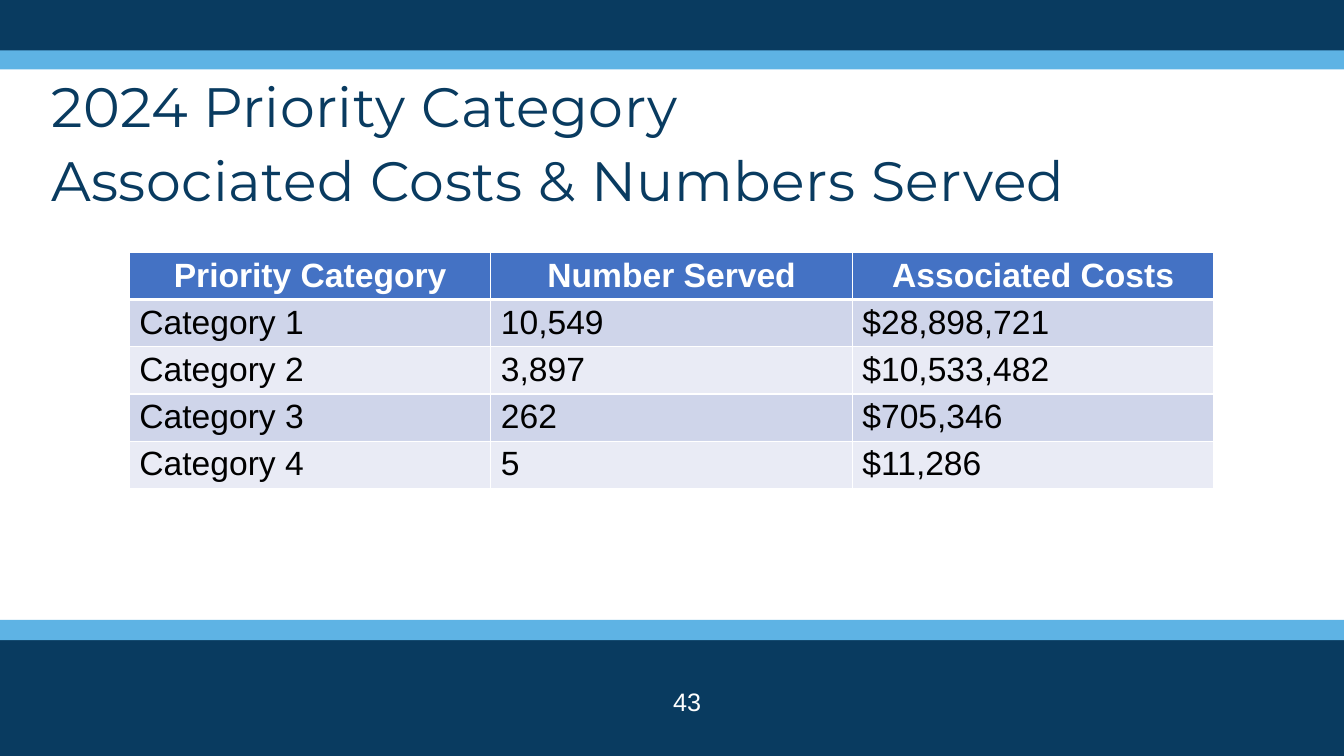
from lxml import etree
from pptx import Presentation
from pptx.dml.color import RGBColor
from pptx.enum.shapes import MSO_SHAPE
from pptx.enum.text import MSO_ANCHOR, MSO_AUTO_SIZE, PP_ALIGN
from pptx.oxml.ns import qn
from pptx.util import Cm, Pt

NAVY = RGBColor(0x09, 0x3B, 0x60)
SKY = RGBColor(0x5E, 0xB3, 0xE4)
WHITE = RGBColor(0xFF, 0xFF, 0xFF)
BLACK = RGBColor(0, 0, 0)
HEADER_BLUE = RGBColor(0x44, 0x72, 0xC4)
ROW_TINTS = (RGBColor(0xCF, 0xD5, 0xEA), RGBColor(0xE9, 0xEB, 0xF5))
RECTANGLE = MSO_SHAPE.RECTANGLE
MIDDLE = MSO_ANCHOR.MIDDLE
NO_AUTOFIT = MSO_AUTO_SIZE.NONE
LEFT, CENTER = PP_ALIGN.LEFT, PP_ALIGN.CENTER
SLIDE_WIDTH, SLIDE_HEIGHT = 33.87, 19.05

BANDS = (
    (16.13, 2.92, NAVY),
    (1.24, 0.51, SKY),
    (0, 1.27, NAVY),
    (15.62, 0.51, SKY),
)
COSTS = (
    ("Priority Category", "Number Served", "Associated Costs"),
    ("Category 1", "10,549", "$28,898,721"),
    ("Category 2", "3,897", "$10,533,482"),
    ("Category 3", "262", "$705,346"),
    ("Category 4", "5", "$11,286"),
)


class CostSlide:
    """Holds the fonts and the slide, and adds each kind of element to it."""

    heading_font = "Montserrat"
    body_font = "Arial"

    def __init__(self, slide):
        self.slide = slide

    def style(self, paragraph, name, size, color, align=LEFT, bold=False):
        paragraph.alignment = align
        font = paragraph.font
        font.name, font.size, font.bold = name, Pt(size), bold
        font.color.rgb = color

    def band(self, top, height, color):
        band = self.slide.shapes.add_shape(
            RECTANGLE, 0, Cm(top), Cm(SLIDE_WIDTH), Cm(height))
        band.shadow.inherit = False
        band.fill.solid()
        band.fill.fore_color.rgb = color
        band.line.fill.background()

    def title(self, text, left, top, width, height):
        title = self.slide.shapes.title
        title.left, title.top = Cm(left), Cm(top)
        title.width, title.height = Cm(width), Cm(height)
        frame = title.text_frame
        frame.text = text
        frame.auto_size = NO_AUTOFIT
        frame.vertical_anchor = MIDDLE
        heading = frame.paragraphs[0]
        heading.line_spacing = 1.11
        self.style(heading, self.heading_font, 39.6, NAVY)
        heading.font._rPr.set("spc", "40")

    def borders(self, cell, bottom_width):
        properties = cell._tc.get_or_add_tcPr()
        widths = {"a:lnL": 1, "a:lnR": 1, "a:lnT": 1, "a:lnB": bottom_width}
        for side, width in widths.items():
            line = etree.SubElement(properties, qn(side), w=str(Pt(width)))
            fill = etree.SubElement(line, qn("a:solidFill"))
            etree.SubElement(fill, qn("a:srgbClr"), val=str(WHITE))

    def table(self, rows, left, top, column_width, row_height):
        column_count = len(rows[0])
        table = self.slide.shapes.add_table(
            len(rows), column_count, Cm(left), Cm(top),
            Cm(column_width * column_count), Cm(row_height * len(rows))).table
        for column in table.columns:
            column.width = Cm(column_width)
        for row_index, row in enumerate(rows):
            header = row_index == 0
            tint = HEADER_BLUE if header else ROW_TINTS[(row_index - 1) % 2]
            for column_index, text in enumerate(row):
                cell = table.cell(row_index, column_index)
                cell.text = text
                cell.margin_top = cell.margin_bottom = Cm(0.11)
                self.borders(cell, 3 if header else 1)
                cell.fill.solid()
                cell.fill.fore_color.rgb = tint
                self.style(cell.text_frame.paragraphs[0], self.body_font, 24,
                           WHITE if header else BLACK,
                           CENTER if header else LEFT, header)

    def page_number(self, text, left, top, width, height):
        frame = self.slide.shapes.add_textbox(
            Cm(left), Cm(top), Cm(width), Cm(height)).text_frame
        frame.text = text
        frame.word_wrap = True
        frame.vertical_anchor = MIDDLE
        self.style(frame.paragraphs[0], self.body_font, 18, WHITE, CENTER)


def main():
    deck = Presentation()
    deck.slide_width, deck.slide_height = Cm(SLIDE_WIDTH), Cm(SLIDE_HEIGHT)
    page = CostSlide(deck.slides.add_slide(deck.slide_layouts[5]))
    for top, height, color in BANDS:
        page.band(top, height, color)
    page.title("2024 Priority Category\vAssociated Costs & Numbers Served",
               1.04, 1.83, 31, 3.33)
    page.table(COSTS, 3.26, 6.36, 9.11, 1.19)
    page.page_number("43", 13.51, 17.17, 7.62, 1.02)
    deck.save("out.pptx")


if __name__ == "__main__":
    main()
